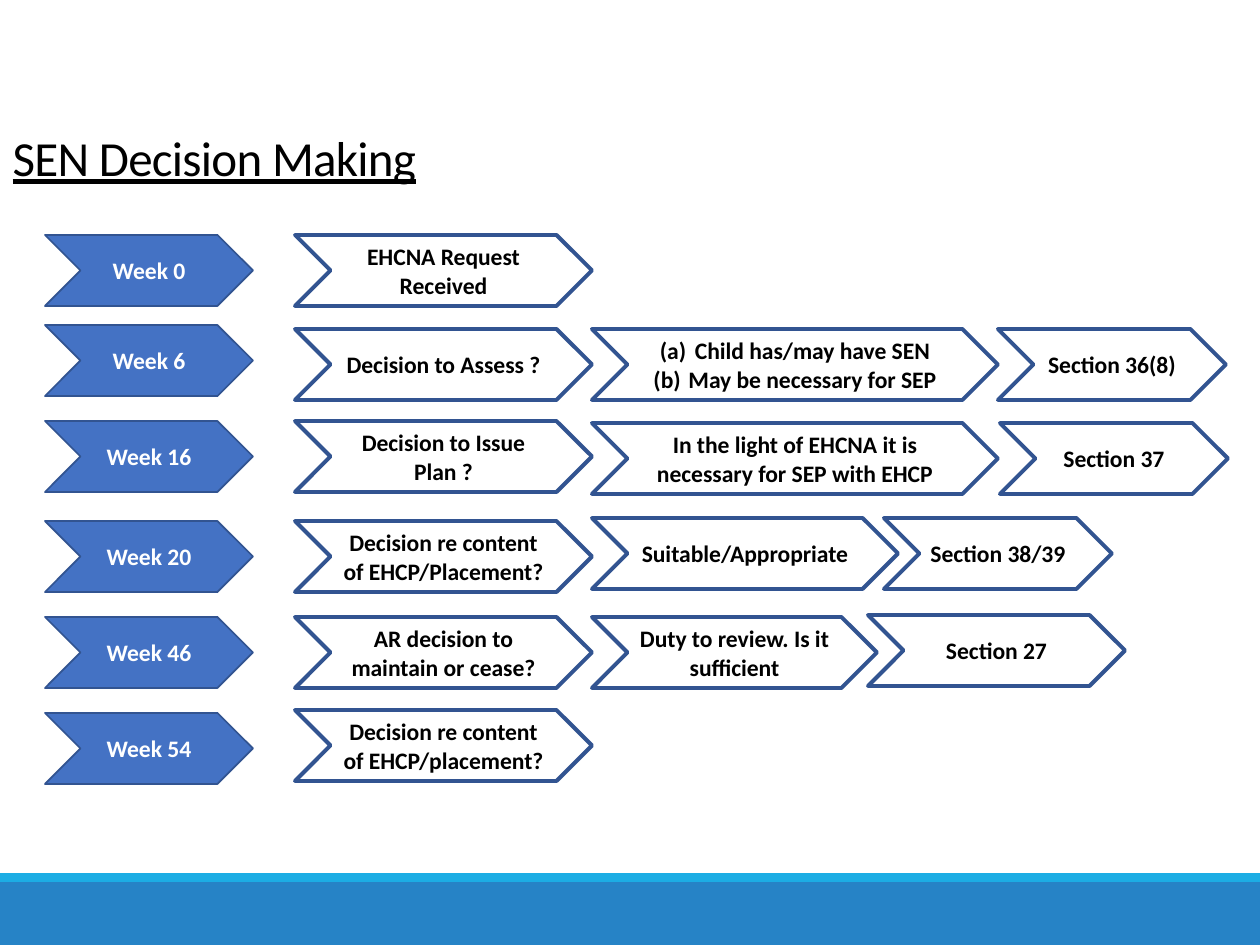
from lxml import etree
from pptx import Presentation
from pptx import util as u
from pptx.dml.color import RGBColor
from pptx.enum import shapes, text
from pptx.oxml.ns import qn

WHITE = RGBColor(0xFF, 0xFF, 0xFF)
BLACK = RGBColor(0, 0, 0)
WEEK_BLUE = RGBColor(0x44, 0x72, 0xC4)
OUTLINE = RGBColor(0x32, 0x54, 0x91)
FOOTER_BLUE = RGBColor(0x26, 0x83, 0xC6)
FOOTER_CYAN = RGBColor(0x1C, 0xAD, 0xE4)
FONT = "Calibri"
CHEVRON_H = 71
WEEK_X, WEEK_W = 45, 208
STEP_X, STEP_W = 295, 297
REASON_X = STEP_X + STEP_W

ROWS = [
    ("Week 0", 235, [(STEP_X, 235, STEP_W, ["EHCNA Request Received"])]),
    ("Week 6", 325, [
        (STEP_X, 329, STEP_W, ["Decision to Assess ?"]),
        (REASON_X, 329, 406, ["Child has/may have SEN", "May be necessary for SEP"]),
        (998, 329, 228, ["Section 36(8)"])]),
    ("Week 16", 421, [
        (STEP_X, 421, STEP_W, ["Decision to Issue Plan ?"]),
        (REASON_X, 423, 406, ["In the light of EHCNA it is necessary for SEP with EHCP"]),
        (1000, 423, 228, ["Section 37"])]),
    ("Week 20", 521, [
        (STEP_X, 521, STEP_W, ["Decision re content of EHCP/Placement?"]),
        (REASON_X, 518, 306, ["Suitable/Appropriate"]),
        (884, 518, 228, ["Section 38/39"])]),
    ("Week 46", 617, [
        (STEP_X, 617, STEP_W, ["AR decision to maintain or cease?"]),
        (REASON_X, 617, 285, ["Duty to review. Is it sufficient"]),
        (868, 615, 257, ["Section 27"])]),
    ("Week 54", 713, [(STEP_X, 710, STEP_W, ["Decision re content of EHCP/placement?"])]),
]


def px(n):
    return u.Emu(round(n * 914400 / 126))


def add_run(p, words, size, color):
    r = p.add_run()
    r.text = words
    r.font.name = FONT
    r.font.size = u.Pt(size)
    r.font.color.rgb = color
    return r


def add_shape(s, kind, x, y, w, h, fill):
    sp = s.shapes.add_shape(kind, px(x), px(y), px(w), px(h))
    sp.shadow.inherit = False
    if fill is None:
        sp.fill.background()
    else:
        sp.fill.solid()
        sp.fill.fore_color.rgb = fill
    return sp


def add_bar(s, y, h, fill):
    sp = add_shape(s, shapes.MSO_SHAPE.RECTANGLE, 0, y, 1260, h, fill)
    sp.line.fill.background()


def letter_paragraph(p):
    pPr = p._p.get_or_add_pPr()
    pPr.set("marL", str(px(35)))
    pPr.set("indent", str(px(-35)))
    etree.SubElement(pPr, qn("a:buFont"), typeface="+mj-lt")
    etree.SubElement(pPr, qn("a:buAutoNum"), type="alphaLcParenBoth")


def add_chevron(s, x, y, w, lines, fill, color, line_width):
    sp = add_shape(s, shapes.MSO_SHAPE.CHEVRON, x, y, w, CHEVRON_H, fill)
    sp.line.color.rgb = OUTLINE
    sp.line.width = u.Pt(line_width)
    tf = sp.text_frame
    tf.word_wrap = True
    tf.vertical_anchor = text.MSO_ANCHOR.MIDDLE
    tf.margin_left = tf.margin_right = px(9)
    tf.margin_top = tf.margin_bottom = px(5)
    for i, words in enumerate(lines):
        p = tf.add_paragraph() if i else tf.paragraphs[0]
        p.alignment = text.PP_ALIGN.CENTER
        if len(lines) > 1:
            letter_paragraph(p)
        add_run(p, words, 13.5, color).font.bold = True


def set_title(s, words):
    sp = s.shapes.title
    sp.left, sp.top, sp.width, sp.height = px(0), px(35), px(1134), px(158)
    tf = sp.text_frame
    tf.vertical_anchor = text.MSO_ANCHOR.BOTTOM
    p = tf.paragraphs[0]
    p.alignment = text.PP_ALIGN.LEFT
    p.line_spacing = 0.85
    r = add_run(p, words, 28, BLACK)
    r.font.underline = True
    r.font._element.set("spc", "-40")


def main():
    prs = Presentation()
    prs.slide_width, prs.slide_height = px(1260), px(945)
    s = prs.slides.add_slide(prs.slide_layouts[5])
    add_bar(s, 882, 63, FOOTER_BLUE)
    add_bar(s, 873, 9, FOOTER_CYAN)
    set_title(s, "SEN Decision Making")
    for week, week_y, steps in ROWS:
        add_chevron(s, WEEK_X, week_y, WEEK_W, [week], WEEK_BLUE, WHITE, 1)
        for x, y, w, lines in steps:
            add_chevron(s, x, y, w, lines, None, BLACK, 2.25)
    prs.save("out.pptx")


if __name__ == "__main__":
    main()
